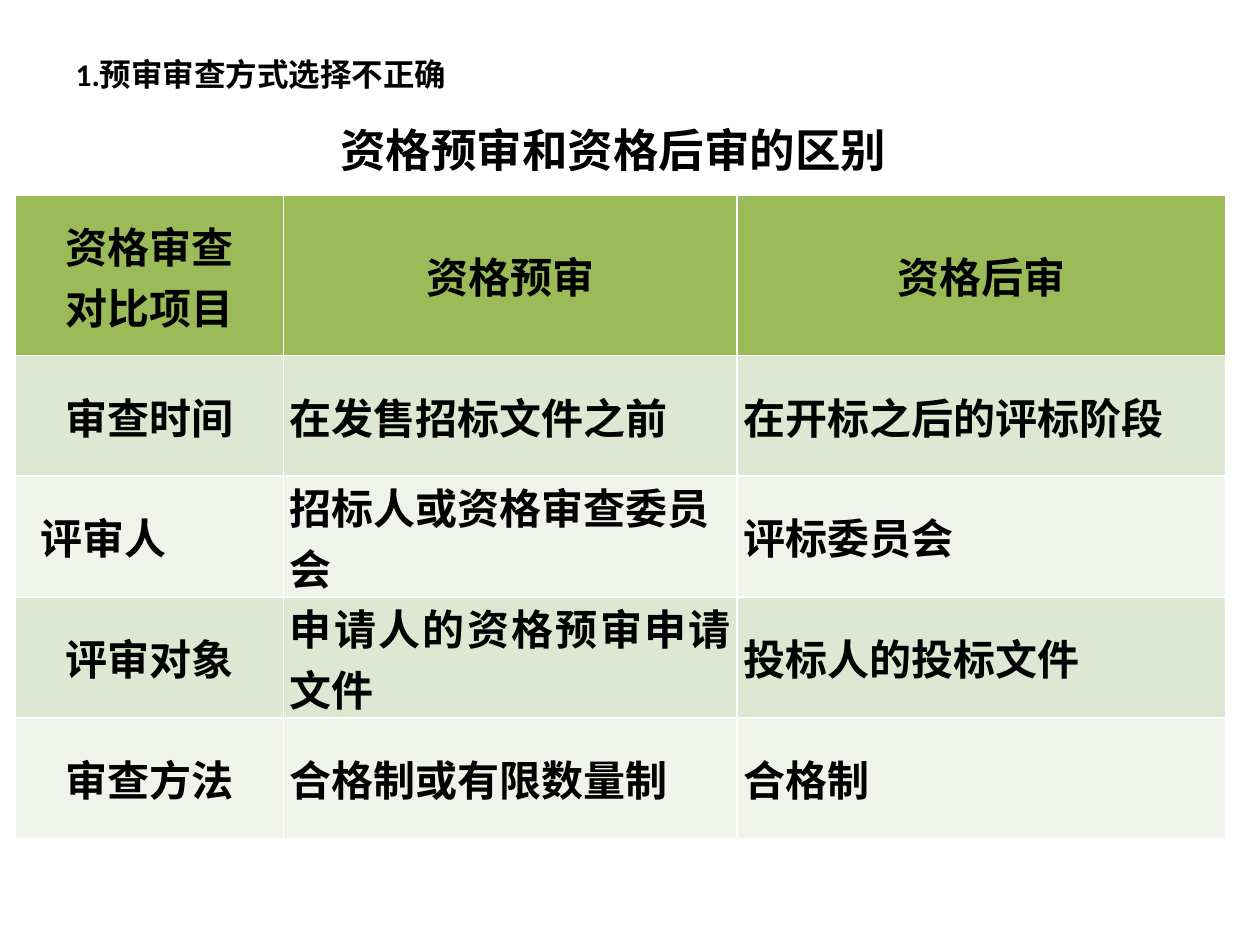
"""Build a slide comparing two kinds of bidder qualification review."""
from lxml import etree
from pptx import Presentation
from pptx import util as u
from pptx.dml.color import RGBColor
from pptx.enum import text
from pptx.oxml import ns

HUES = {"ink": "000000", "head": "9BBB59", "odd": "DEE7D1", "even": "EFF3EA"}
CJK = "Noto Sans CJK SC"
MID, LEFT, JUST = (text.PP_ALIGN.CENTER, text.PP_ALIGN.LEFT,
                   text.PP_ALIGN.JUSTIFY)
COLS = [2.13, 3.6, 3.88]
ROWS = [1.27] + [0.96] * 4
DATA = [
    ["资格审查\n对比项目", "资格预审", "资格后审"],
    ["审查时间", "在发售招标文件之前", "在开标之后的评标阶段"],
    ["评审人", "招标人或资格审查委员会", "评标委员会"],
    ["评审对象", "申请人的资格预审申请文件", "投标人的投标文件"],
    ["审查方法", "合格制或有限数量制", "合格制"],
]
ALIGN = {(2, 0): LEFT, (2, 1): LEFT}


class Deck:
    """Hold the style and the current slide."""

    def __init__(self):
        self.prs = Presentation()
        self.prs.slide_width, self.prs.slide_height = u.Inches(10), u.Inches(7.5)
        self.slide = self.prs.slides.add_slide(self.prs.slide_layouts[5])

    def hue(self, name):
        """Return the colour of that name."""
        return RGBColor.from_string(HUES[name])

    def put(self, frame, words, size, align, face=CJK):
        """Fill a text frame, one paragraph a line."""
        frame.word_wrap = True
        for i, line in enumerate(words.split("\n")):
            para = frame.add_paragraph() if i else frame.paragraphs[0]
            para.alignment = align
            run = para.add_run()
            run.text = line
            font = run.font
            font.size, font.bold, font.name = u.Pt(size), True, face
            font.color.rgb = self.hue("ink")
            east = etree.SubElement(run._r.get_or_add_rPr(), ns.qn("a:ea"))
            east.set("typeface", CJK)

    def title(self, words, box):
        """Place the slide title."""
        shape = self.slide.shapes.title
        shape.left, shape.top, shape.width, shape.height = map(u.Inches, box)
        shape.text_frame.vertical_anchor = text.MSO_ANCHOR.MIDDLE
        self.put(shape.text_frame, words, 18, LEFT, "Calibri")

    def label(self, words, box):
        """Add a centred heading."""
        shape = self.slide.shapes.add_textbox(*map(u.Inches, box))
        self.put(shape.text_frame, words, 26, MID)

    def table(self, data, left, top):
        """Add the banded table."""
        size = map(u.Inches, (left, top, sum(COLS), sum(ROWS)))
        grid = self.slide.shapes.add_table(len(ROWS), len(COLS), *size).table
        for col, wide in zip(grid.columns, COLS):
            col.width = u.Inches(wide)
        for r, (row, high) in enumerate(zip(grid.rows, ROWS)):
            row.height = u.Inches(high)
            band = "head" if r == 0 else "odd" if r % 2 else "even"
            for c, cell in enumerate(row.cells):
                cell.fill.solid()
                cell.fill.fore_color.rgb = self.hue(band)
                cell.vertical_anchor = text.MSO_ANCHOR.MIDDLE
                cell.margin_left = u.Inches(0.2 if (r, c) == (2, 0) else 0.05)
                cell.margin_right = u.Inches(0.05)
                cell.margin_top = cell.margin_bottom = 0
                align = ALIGN.get((r, c), JUST if r and c else MID)
                self.put(cell.text_frame, data[r][c], 24, align)


def main():
    """Build and save the slide."""
    deck = Deck()
    deck.label("资格预审和资格后审的区别", (1.22, 0.92, 7.3, 0.55))
    deck.table(DATA, 0.12, 1.55)
    deck.title("1.预审审查方式选择不正确", (0.5, 0.34, 5.92, 0.5))
    deck.prs.save("out.pptx")


if __name__ == "__main__":
    main()
